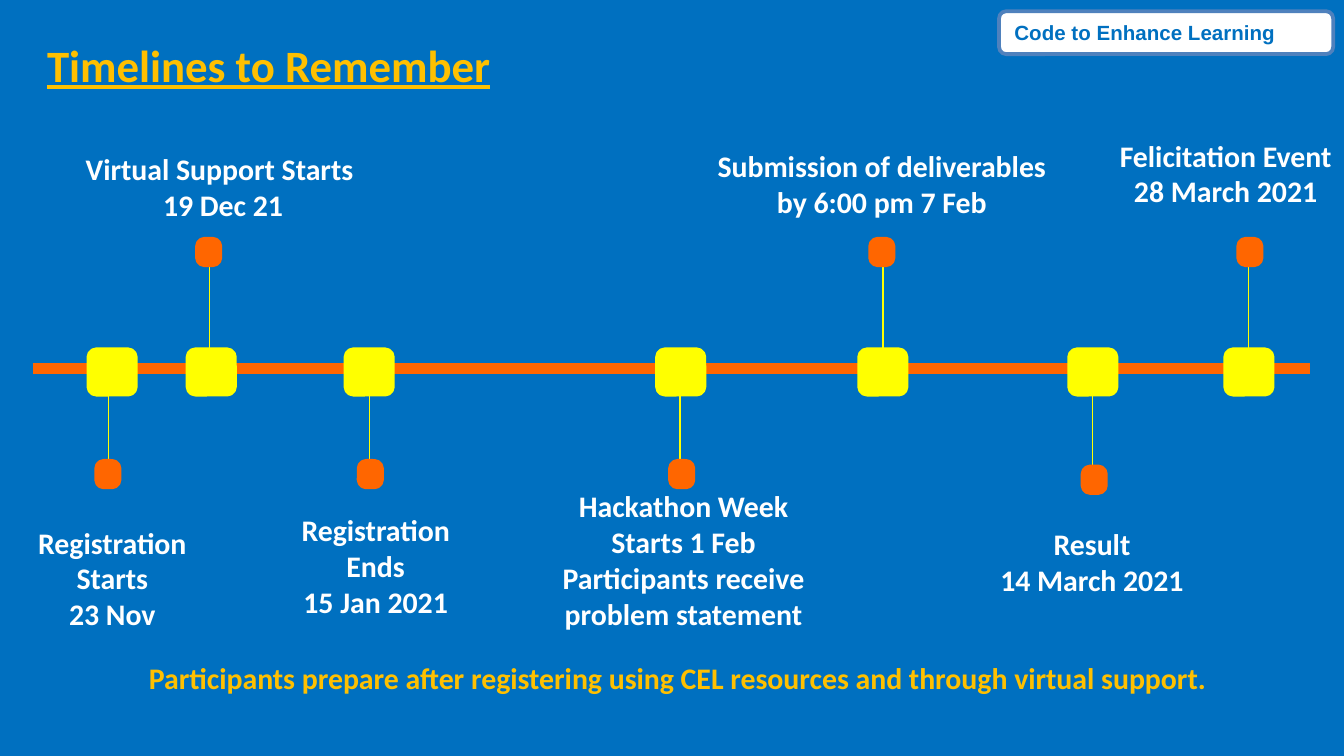
from pptx import Presentation
from pptx.dml.color import RGBColor
from pptx.enum import shapes, text
from pptx.oxml.ns import qn
from pptx.util import Pt
from lxml import etree

BLUE, GOLD, ORANGE, YELLOW, WHITE = "0070C0", "FFC000", "FF6600", "FFFF00", "FFFFFF"
BADGE_EDGE = "4F81BD"

TITLE = "Timelines to Remember"
BADGE = "Code to Enhance Learning"
FOOTER = "Participants prepare after registering using CEL resources and through virtual support."

# label lines, label box, node x, stem x, cap centre
MILESTONES = [
    (["Registration Starts", "23 Nov"], (12.2, 278, 96, 50), 60.1, 58.3, (57.8, 254)),
    (["Virtual Support Starts ", "19 Dec 21"], (36, 77.8, 167, 60), 113.2, 112.3, (111.8, 135)),
    (["Registration Ends", "15 Jan 2021"], (141.8, 271.4, 119, 93), 197.8, 198, (198.4, 254)),
    (["Hackathon Week", "Starts 1 Feb", "Participants receive problem statement"],
     (282.2, 258.5, 168, 88), 364.7, 364.3, (365.2, 254)),
    (["Submission of deliverables by 6:00 pm 7 Feb"],
     (378, 76.3, 189, 53), 473, 473, (472.4, 135)),
    (["Result", "14 March 2021"], (530, 278.6, 110, 68), 585.5, 585.4, (586.2, 257)),
    (["Felicitation Event", "28 March 2021"], (593.3, 70.6, 126.7, 48), 669.1, 668.9, (669.6, 135)),
]
AXIS_Y, NODE_Y = 197.3, 199.3
NODE_SIZE, CAP_SIZE = (24.9, 23.8), (12, 13.7)


def rgb(code):
    return RGBColor.from_string(code)


def write(shape, lines, size, color, font="Calibri", align=text.PP_ALIGN.CENTER,
          inset=(2.9, 2.9), anchor=text.MSO_ANCHOR.TOP, underline=None):
    frame = shape.text_frame
    frame.text = "\n".join(lines)
    frame.word_wrap = True
    frame.auto_size = text.MSO_AUTO_SIZE.NONE
    frame.vertical_anchor = anchor
    frame.margin_left = frame.margin_right = Pt(inset[0])
    frame.margin_top = frame.margin_bottom = Pt(inset[1])
    for paragraph in frame.paragraphs:
        paragraph.alignment = align
        for run in paragraph.runs:
            run.font.name, run.font.size, run.font.bold = font, Pt(size), True
            run.font.underline = underline
            run.font.color.rgb = rgb(color)


def add_label(box, lines, color, **style):
    write(slide.shapes.add_textbox(*map(Pt, box)), lines, 16, color, **style)


def add_rounded(box, fill, edge, width, corner):
    shape = slide.shapes.add_shape(shapes.MSO_SHAPE.ROUNDED_RECTANGLE, *map(Pt, box))
    shape.shadow.inherit = False
    shape.adjustments[0] = corner
    shape.fill.solid()
    shape.fill.fore_color.rgb = rgb(fill)
    shape.line.color.rgb = rgb(edge)
    shape.line.width = Pt(width)
    return shape


def add_marker(x, y, size, color, corner):
    """Rounded square centred on x, y."""
    w, h = size
    add_rounded((x - w / 2, y - h / 2, w, h), color, color, 2.5, corner)


def add_line(x1, y1, x2, y2, color, width):
    line = slide.shapes.add_connector(
        shapes.MSO_CONNECTOR.STRAIGHT, Pt(x1), Pt(y1), Pt(x2), Pt(y2))
    line.line.color.rgb = rgb(color)
    line.line.width = Pt(width)
    etree.SubElement(line._element.spPr, qn("a:effectLst"))


prs = Presentation()
prs.slide_width, prs.slide_height = Pt(720), Pt(405)
slide = prs.slides.add_slide(prs.slide_layouts[5])
slide.background.fill.solid()
slide.background.fill.fore_color.rgb = rgb(BLUE)

title = slide.shapes.title
title.left, title.top, title.width, title.height = map(Pt, (18, 16.6, 420, 37))
write(title, [TITLE], 24, GOLD, align=text.PP_ALIGN.LEFT, inset=(7.2, 3.6), underline=True)

badge = add_rounded((535.2, 6, 179, 23), WHITE, BADGE_EDGE, 2, 0.167)
write(badge, [BADGE], 11, BLUE, font="Arial", align=text.PP_ALIGN.LEFT,
      inset=(7.2, 3.6), anchor=text.MSO_ANCHOR.MIDDLE)

add_line(17.5, AXIS_Y, 702, AXIS_Y, ORANGE, 6)
for lines, box, node_x, stem_x, (cap_x, cap_y) in MILESTONES:
    add_marker(node_x, NODE_Y, NODE_SIZE, YELLOW, 0.167)
    add_line(stem_x, AXIS_Y, stem_x, cap_y, YELLOW, 0.75)
    add_marker(cap_x, cap_y, CAP_SIZE, ORANGE, 0.318)
    add_label(box, lines, WHITE)

add_label((12.2, 350, 702, 26.6), [FOOTER], GOLD, inset=(7.2, 3.6))

prs.save("out.pptx")
